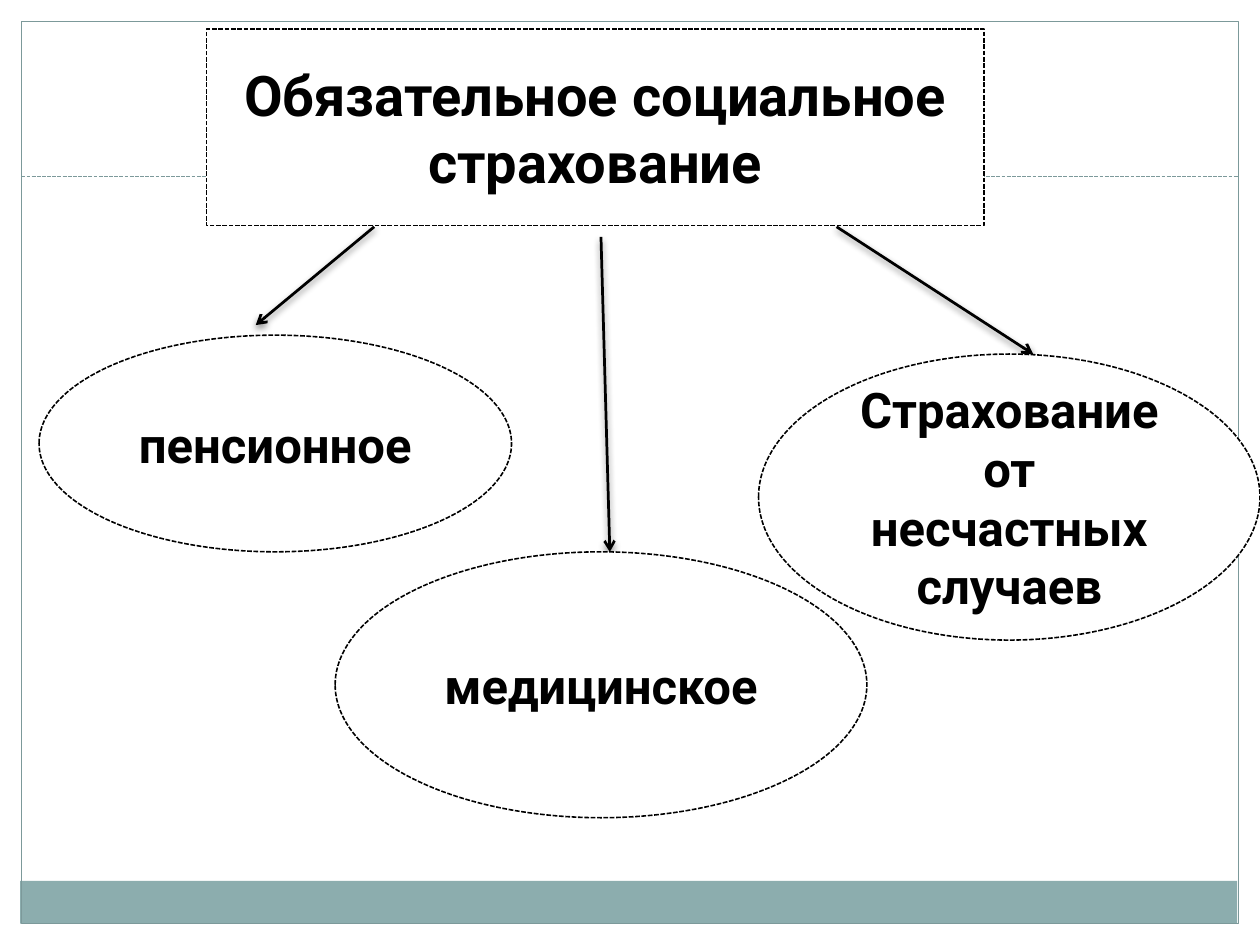
import pptx
import pptx.util
import pptx.dml.color
import pptx.enum.dml
import pptx.enum.shapes
import pptx.enum.text
import pptx.oxml
import pptx.oxml.ns

SHAPE = pptx.enum.shapes.MSO_SHAPE
DASH = pptx.enum.dml.MSO_LINE.SQUARE_DOT
BLACK = pptx.dml.color.RGBColor(0x00, 0x00, 0x00)
WHITE = pptx.dml.color.RGBColor(0xFF, 0xFF, 0xFF)
TEAL = pptx.dml.color.RGBColor(0x8C, 0xAD, 0xAE)
FRAME_GREY = pptx.dml.color.RGBColor(0x7C, 0x99, 0x9A)
FONT = "Roboto"

# Places are percentages of the slide's width and height.
FOOTER_BAND = (1.6, 93.2, 96.6, 4.53)
FRAME = (1.7, 2.27, 96.6, 95.47)
DIVIDER = ((1.7, 18.67), (98.3, 18.67))
TITLE = ("Обязательное социальное страхование", (16.4, 3.07, 61.7, 20.8))
INSURANCE_KINDS = [
    ("пенсионное", (3.1, 35.47, 37.5, 22.93)),
    ("медицинское", (26.6, 58.4, 42.2, 28.13)),
    ("Страхование от несчастных случаев", (60.2, 37.47, 39.8, 30.27)),
]
ARROWS = [
    ((29.7, 24), (20.3, 34.4)),
    ((47.7, 25.07), (48.4, 58.4)),
    ((66.4, 24), (82, 37.47)),
]

NS = pptx.oxml.ns.nsdecls("a")
ARROWHEAD = f'<a:tailEnd {NS} type="arrow"/>'
NO_EFFECT = f"<a:effectLst {NS}/>"
SOFT_SHADOW = (
    f'<a:effectLst {NS}><a:outerShdw blurRad="50800" dist="25400" dir="5400000" '
    'rotWithShape="0"><a:srgbClr val="000000"><a:alpha val="45000"/>'
    "</a:srgbClr></a:outerShdw></a:effectLst>"
)

deck = pptx.Presentation()
deck.slide_width = pptx.util.Inches(10)
deck.slide_height = pptx.util.Inches(7.5)
slide = deck.slides.add_slide(deck.slide_layouts[6])


def across(share):
    return int(deck.slide_width * share / 100)


def down(share):
    return int(deck.slide_height * share / 100)


def style_line(line, color, width, dash=None):
    line.color.rgb = color
    line.width = pptx.util.Pt(width)
    if dash is not None:
        line.dash_style = dash


def add_panel(kind, place, fill=None):
    left, top, width, height = place
    panel = slide.shapes.add_shape(
        kind, across(left), down(top), across(width), down(height)
    )
    panel.shadow.inherit = False
    if fill is None:
        panel.fill.background()
    else:
        panel.fill.solid()
        panel.fill.fore_color.rgb = fill
    return panel


def add_line(ends, color, width, dash=None, arrow=False):
    (x1, y1), (x2, y2) = ends
    line = slide.shapes.add_connector(
        pptx.enum.shapes.MSO_CONNECTOR.STRAIGHT,
        across(x1), down(y1), across(x2), down(y2),
    )
    style_line(line.line, color, width, dash)
    properties = line._element.spPr
    if arrow:
        outline = properties.find(pptx.oxml.ns.qn("a:ln"))
        outline.append(pptx.oxml.parse_xml(ARROWHEAD))
    properties.append(pptx.oxml.parse_xml(SOFT_SHADOW if arrow else NO_EFFECT))


def write(panel, text, size, color=BLACK, bold=True):
    frame = panel.text_frame
    frame.word_wrap = True
    frame.vertical_anchor = pptx.enum.text.MSO_ANCHOR.MIDDLE
    paragraph = frame.paragraphs[0]
    paragraph.alignment = pptx.enum.text.PP_ALIGN.CENTER
    run = paragraph.add_run()
    run.text = text
    run.font.name = FONT
    run.font.size = pptx.util.Pt(size)
    run.font.bold = bold
    run.font.color.rgb = color


def add_node(kind, text, place, size):
    node = add_panel(kind, place, WHITE)
    style_line(node.line, BLACK, 0.9, DASH)
    write(node, text, size)


footer_band = add_panel(SHAPE.RECTANGLE, FOOTER_BAND, TEAL)
footer_band.line.fill.background()
page_frame = add_panel(SHAPE.RECTANGLE, FRAME)
style_line(page_frame.line, FRAME_GREY, 0.75)
add_line(DIVIDER, FRAME_GREY, 0.75, dash=DASH)

add_node(SHAPE.RECTANGLE, *TITLE, size=32)
for ends in ARROWS:
    add_line(ends, BLACK, 1.57, arrow=True)
for text, place in INSURANCE_KINDS:
    add_node(SHAPE.OVAL, text, place, size=28)

deck.save("out.pptx")
